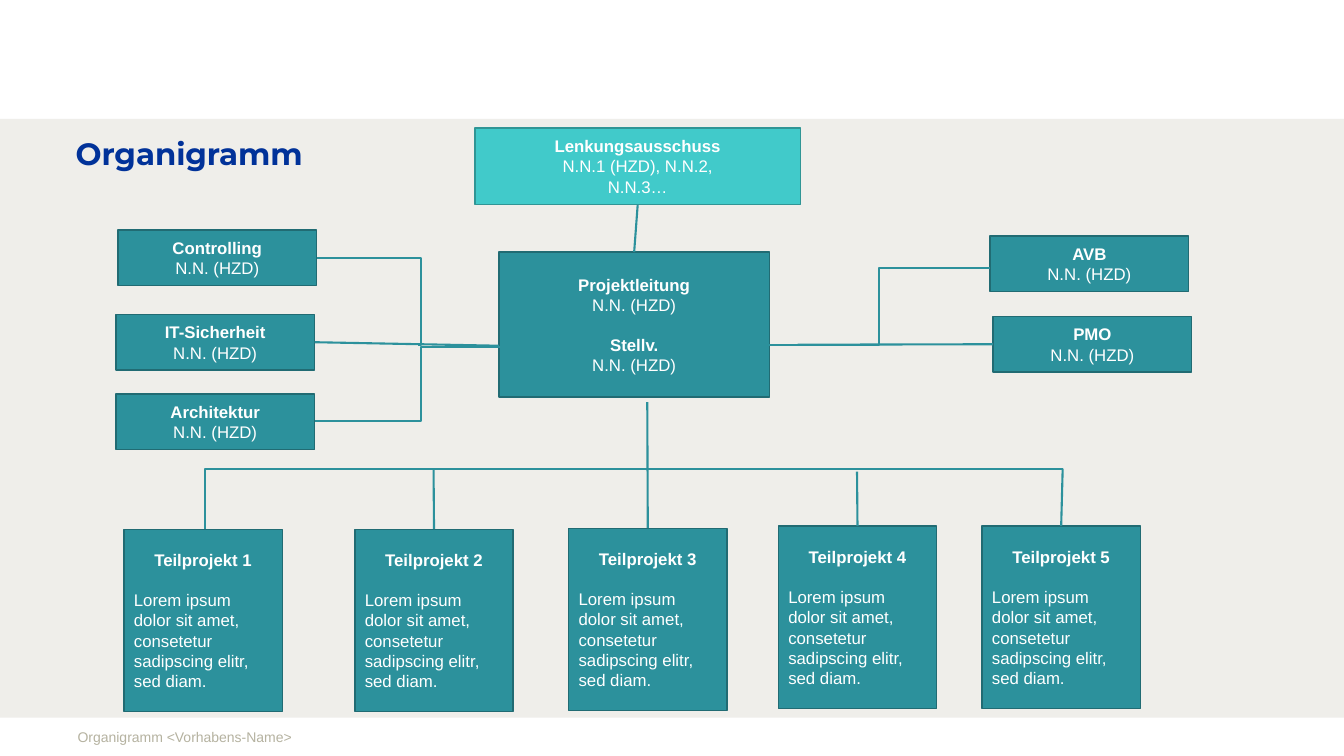
from dataclasses import dataclass
from typing import Any, Optional

from lxml.etree import SubElement
from pptx import Presentation
from pptx.dml.color import RGBColor
from pptx.enum.shapes import MSO_CONNECTOR, MSO_SHAPE
from pptx.enum.text import MSO_ANCHOR, PP_ALIGN
from pptx.oxml.ns import qn
from pptx.util import Inches, Pt


@dataclass(frozen=True)
class Theme:
    """Colours, fonts and type sizes."""
    band: str = "E7E6E0"
    teal: str = "2C919C"
    edge: str = "216B73"
    aqua: str = "41CACA"
    rim: str = "309595"
    white: str = "FFFFFF"
    navy: str = "013299"
    grey: str = "B5B2A0"
    font: str = "Arial"
    head: str = "Montserrat"
    title: int = 22
    text: int = 12
    foot: int = 10


THEME = Theme()


@dataclass(frozen=True)
class Line:
    """One paragraph in a box."""
    text: str
    bold: bool = False
    gap: int = 0
    align: PP_ALIGN = PP_ALIGN.CENTER


@dataclass(frozen=True)
class Box:
    """One unit of the chart."""
    key: str
    lines: tuple[Line, ...]
    left: float
    top: float
    wide: float
    high: float
    fill: str = THEME.teal
    edge: str = THEME.edge


@dataclass(frozen=True)
class Link:
    """One line, with the (box, side) pairs that it joins."""
    start: tuple[float, float]
    end: tuple[float, float]
    tail: Optional[tuple[str, int]] = None
    head: Optional[tuple[str, int]] = None
    bend: str = ""
    turn: float = 0.5


NAME = "N.N. (HZD)"
LOREM = "Lorem ipsum dolor sit amet, consetetur sadipscing elitr, sed diam."
BOXES = [
    Box("board", (Line("Lenkungsausschuss", True), Line("N.N.1 (HZD), N.N.2,"), Line("N.N.3…")),
        4.71, 1.27, 3.23, 0.76, THEME.aqua, THEME.rim),
    Box("lead", (Line("Projektleitung", True), Line(NAME), Line("Stellv.", True, 14), Line(NAME)),
        4.95, 2.5, 2.68, 1.44),
]
ROLES = [("AVB", 9.82, 2.34), ("PMO", 9.85, 3.14), ("Controlling", 1.17, 2.28),
         ("IT-Sicherheit", 1.15, 3.12), ("Architektur", 1.15, 3.91)]
BOXES += [Box(role, (Line(role, True), Line(NAME)), left, top, 1.97, 0.55)
          for role, left, top in ROLES]
TEAMS = [(1.23, 5.25), (3.52, 5.25), (5.64, 5.24), (7.72, 5.22), (9.74, 5.22)]
BOXES += [Box(f"team{num}", (Line(f"Teilprojekt {num}", True),
                             Line(LOREM, gap=14, align=PP_ALIGN.LEFT)), left, top, 1.57, 1.81)
          for num, (left, top) in enumerate(TEAMS, 1)]

LINKS = [
    Link((6.32, 2.04), (6.32, 2.49), ("board", 2), ("lead", 0)),
    Link((3.14, 3.43), (4.95, 3.43), ("IT-Sicherheit", 3)),
    Link((7.91, 3.42), (9.85, 3.42), head=("PMO", 1)),
    Link((6.42, 3.99), (6.43, 5.24), head=("team3", 0)),
    Link((4.3, 4.66), (4.3, 5.25), head=("team2", 0)),
    Link((8.5, 4.68), (8.5, 5.22), head=("team4", 0)),
    Link((10.54, 4.65), (10.54, 5.22), head=("team5", 0)),
    Link((9.82, 2.66), (7.61, 3.42), bend="bentConnector3"),
    Link((5.23, 3.44), (3.12, 4.18), bend="bentConnector3"),
    Link((3.14, 2.56), (4.15, 3.42), bend="bentConnector3", turn=1.03),
    Link((10.54, 4.65), (2.03, 5.25), bend="bentConnector2"),
]


def style(item: Any, values: dict[str, Any]) -> None:
    """Set each format value on an item."""
    for name, value in values.items():
        setattr(item, name, value)


def write(para: Any, text: str, size: int, color: str, bold: bool = False,
          face: str = THEME.font) -> None:
    """Put one formatted run in a paragraph."""
    run = para.add_run()
    run.text = text
    style(run.font, {"size": Pt(size), "bold": bold, "name": face})
    run.font.color.rgb = RGBColor.from_string(color)


def frame(shape: Any, anchor: MSO_ANCHOR, pads: tuple[float, float, float, float]) -> Any:
    """Format a text frame and give it back."""
    left, top, right, base = map(Inches, pads)
    style(shape.text_frame, {
        "word_wrap": True, "vertical_anchor": anchor, "margin_left": left,
        "margin_top": top, "margin_right": right, "margin_bottom": base})
    return shape.text_frame


def block(slide: Any, left: float, top: float, wide: float, high: float, fill: str) -> Any:
    """Add a filled rectangle without shadow."""
    shape = slide.shapes.add_shape(
        MSO_SHAPE.RECTANGLE, Inches(left), Inches(top), Inches(wide), Inches(high))
    shape.shadow.inherit = False
    shape.fill.solid()
    shape.fill.fore_color.rgb = RGBColor.from_string(fill)
    return shape


def backdrop(slide: Any) -> None:
    """Add the pale band behind everything."""
    band = block(slide, 0, 1.18, 13.33, 5.94, THEME.band)
    band.line.fill.background()
    color = band.fill._xPr.find(qn("a:solidFill"))[0]
    SubElement(color, qn("a:alpha"), val="65000")
    slide.shapes._spTree.insert(2, band._element)


def heading(slide: Any) -> None:
    """Fill the title placeholder."""
    title = slide.shapes.title
    style(title, {"left": Inches(0.75), "top": Inches(1.36),
                  "width": Inches(10.09), "height": Inches(0.5)})
    para = frame(title, MSO_ANCHOR.TOP, (0, 0, 0, 0)).paragraphs[0]
    style(para, {"alignment": PP_ALIGN.LEFT, "line_spacing": Pt(25)})
    write(para, "Organigramm", THEME.title, THEME.navy, True, THEME.head)


def footer(slide: Any) -> None:
    """Add the footer text."""
    note = slide.shapes.add_textbox(Inches(0.77), Inches(7.13), Inches(4.5), Inches(0.37))
    para = frame(note, MSO_ANCHOR.MIDDLE, (0, 0.05, 0.1, 0.05)).paragraphs[0]
    write(para, "Organigramm <Vorhabens-Name>", THEME.foot, THEME.grey)


def unit(slide: Any, box: Box) -> Any:
    """Draw one box with its lines."""
    shape = block(slide, box.left, box.top, box.wide, box.high, box.fill)
    shape.line.color.rgb = RGBColor.from_string(box.edge)
    shape.line.width = Pt(1)
    text = frame(shape, MSO_ANCHOR.MIDDLE, (0.1, 0.05, 0.1, 0.05))
    for index, line in enumerate(box.lines):
        para = text.add_paragraph() if index else text.paragraphs[0]
        style(para, {"alignment": line.align, "space_before": Pt(line.gap)})
        write(para, line.text, THEME.text, THEME.white, line.bold)
    return shape


def join(slide: Any, link: Link, units: dict[str, Any]) -> None:
    """Draw one connector and join its ends."""
    kind = MSO_CONNECTOR.ELBOW if link.bend else MSO_CONNECTOR.STRAIGHT
    wire = slide.shapes.add_connector(kind, *map(Inches, link.start + link.end))
    wire.line.color.rgb = RGBColor.from_string(THEME.teal)
    wire.line.width = Pt(1.5)
    props = wire._element.spPr
    SubElement(props, qn("a:effectLst"))
    if link.bend:
        geom = props.find(qn("a:prstGeom"))
        geom.set("prst", link.bend)
        if link.turn != 0.5:
            SubElement(geom.find(qn("a:avLst")), qn("a:gd"), name="adj1",
                       fmla=f"val {round(link.turn * 100000)}")
    for hook, end in ((wire.begin_connect, link.tail), (wire.end_connect, link.head)):
        if end:
            hook(units[end[0]], end[1])


def main() -> None:
    """Build and save the slide."""
    deck = Presentation()
    style(deck, {"slide_width": Inches(13.33), "slide_height": Inches(7.5)})
    slide = deck.slides.add_slide(deck.slide_layouts[5])
    backdrop(slide)
    heading(slide)
    units = {box.key: unit(slide, box) for box in BOXES}
    for link in LINKS:
        join(slide, link, units)
    footer(slide)
    deck.save("out.pptx")


if __name__ == "__main__":
    main()
